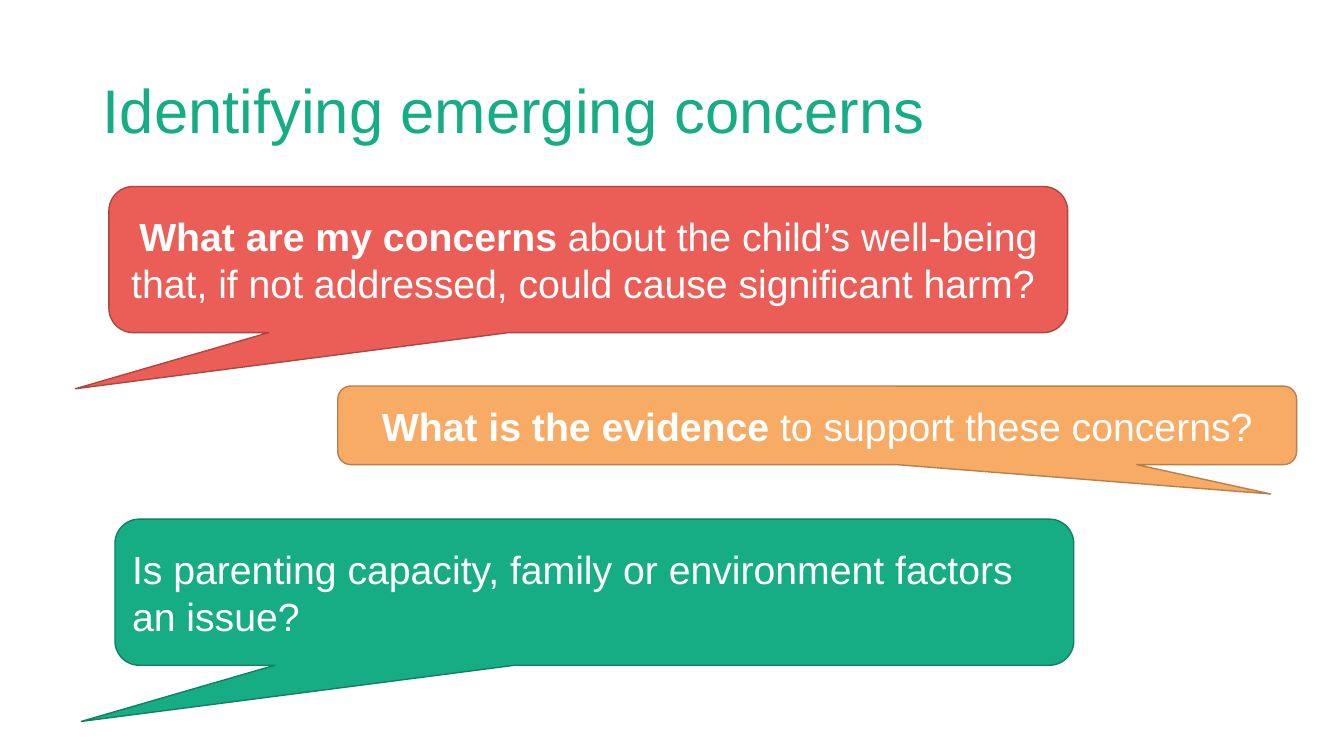
from dataclasses import dataclass

import pptx
import pptx.dml.color
import pptx.enum.shapes
import pptx.enum.text
import pptx.slide
import pptx.util

Inches = pptx.util.Inches
Align = pptx.enum.text.PP_ALIGN
Anchor = pptx.enum.text.MSO_ANCHOR


@dataclass(frozen=True)
class Theme:
    font: str = "Arial"
    title_size: int = 44
    callout_size: int = 28
    white: str = "FFFFFF"
    red: str = "EB5E57"
    red_edge: str = "AE4640"
    orange: str = "F7AB64"
    orange_edge: str = "B77F4A"
    green: str = "16AD85"
    green_edge: str = "108062"


THEME = Theme()
CALLOUT_WIDTH = 9.51
TALL = 1.45
CORNER = 0.167
TAIL_LEFT = (-0.535, 0.884)
TAIL_RIGHT = (0.473, 0.873)


@dataclass(frozen=True)
class Callout:
    left: float
    top: float
    height: float
    tail: tuple[float, float]
    fill: str
    edge: str
    text: str
    lead: str = ""
    align: Align = Align.CENTER


CALLOUTS = [
    Callout(1.08, 1.85, TALL, TAIL_LEFT, THEME.red, THEME.red_edge,
            " about the child’s well-being that, if not addressed, could cause significant harm? ",
            lead="What are my concerns"),
    Callout(3.35, 3.83, 0.78, TAIL_RIGHT, THEME.orange, THEME.orange_edge,
            " to support these concerns?", lead="What is the evidence"),
    Callout(1.14, 5.15, TALL, TAIL_LEFT, THEME.green, THEME.green_edge,
            "Is parenting capacity, family or environment factors an issue?",
            align=Align.LEFT),
]


def rgb(code: str) -> pptx.dml.color.RGBColor:
    return pptx.dml.color.RGBColor.from_string(code)


def set_font(font: pptx.text.text.Font, size: int, color: str) -> None:
    font.name = THEME.font
    font.size = pptx.util.Pt(size)
    font.color.rgb = rgb(color)


def draw_title(slide: pptx.slide.Slide, text: str) -> None:
    title = slide.shapes.title
    title.left, title.top = Inches(0.92), Inches(0.4)
    title.width, title.height = Inches(11.5), Inches(1.45)
    frame = title.text_frame
    frame.text = text
    frame.auto_size = pptx.enum.text.MSO_AUTO_SIZE.NONE
    frame.vertical_anchor = Anchor.MIDDLE
    para = frame.paragraphs[0]
    para.alignment = Align.LEFT
    para.line_spacing = 0.9
    set_font(para.font, THEME.title_size, THEME.green)


def draw_callout(slide: pptx.slide.Slide, callout: Callout) -> None:
    box = slide.shapes.add_shape(
        pptx.enum.shapes.MSO_SHAPE.ROUNDED_RECTANGULAR_CALLOUT,
        Inches(callout.left), Inches(callout.top),
        Inches(CALLOUT_WIDTH), Inches(callout.height))
    for index, value in enumerate((*callout.tail, CORNER)):
        box.adjustments[index] = value
    box.shadow.inherit = False
    box.fill.solid()
    box.fill.fore_color.rgb = rgb(callout.fill)
    box.line.color.rgb = rgb(callout.edge)
    box.line.width = pptx.util.Pt(1)

    frame = box.text_frame
    frame.word_wrap = True
    frame.vertical_anchor = Anchor.MIDDLE
    para = frame.paragraphs[0]
    para.alignment = callout.align
    set_font(para.font, THEME.callout_size, THEME.white)
    if callout.lead:
        span = para.add_run()
        span.text = callout.lead
        span.font.bold = True
    para.add_run().text = callout.text


def main() -> None:
    deck = pptx.Presentation()
    deck.slide_width, deck.slide_height = Inches(13.33), Inches(7.5)
    title_only = deck.slide_layouts.get_by_name("Title Only")
    slide = deck.slides.add_slide(title_only)
    draw_title(slide, "Identifying emerging concerns")
    for callout in CALLOUTS:
        draw_callout(slide, callout)
    deck.save("out.pptx")


if __name__ == "__main__":
    main()
